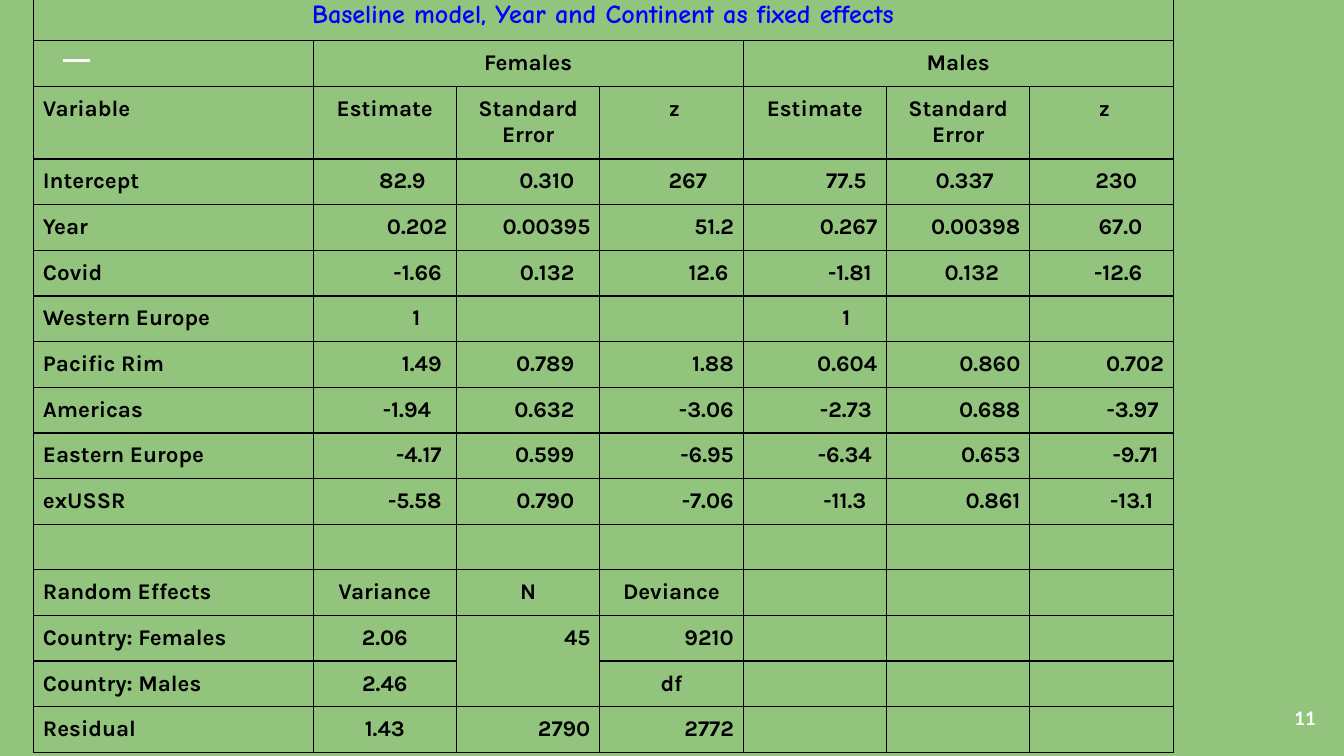
import pptx
import pptx.dml.color
import pptx.enum.shapes
import pptx.enum.text
import pptx.oxml
import pptx.util
from pptx.util import Inches

BLACK = pptx.dml.color.RGBColor(0x00, 0x00, 0x00)
BLUE = pptx.dml.color.RGBColor(0x00, 0x00, 0xFF)
GREEN = pptx.dml.color.RGBColor(0x93, 0xC4, 0x7D)
WHITE = pptx.dml.color.RGBColor(0xFF, 0xFF, 0xFF)
ALIGN = pptx.enum.text.PP_ALIGN
ANCHOR = pptx.enum.text.MSO_ANCHOR

TITLE = "Baseline model, Year and Continent as fixed effects"
SEXES = ["Females", "Males"]
STATISTICS = ["Estimate", "Standard Error", " z"]
PAGE_NUMBER = "11"

ESTIMATES = [
    ("Intercept", ("82.9", 4), ("0.310", 3), ("267", 5), ("77.5", 2), ("0.337", 5), ("230", 5)),
    ("Year", ("0.202", 0), ("0.00395", 0), ("51.2", 0), ("0.267", 0), ("0.00398", 0), ("67.0", 4)),
    ("Covid", ("-1.66", 1), ("0.132", 3), ("12.6", 1), ("-1.81", 1), ("0.132", 4), ("-12.6", 4)),
    ("Western Europe", ("1", 5), "", "", ("1", 5), "", ""),
    ("Pacific Rim", ("1.49", 1), ("0.789", 3), ("1.88", 0), ("0.604", 0), ("0.860", 0), ("0.702", 0)),
    ("Americas", ("-1.94", 3), ("0.632", 3), ("-3.06", 0), ("-2.73", 1), ("0.688", 0), ("-3.97", 1)),
    ("Eastern Europe", ("-4.17", 1), ("0.599", 3), ("-6.95", 0), ("-6.34", 1), ("0.653", 0), ("-9.71", 1)),
    ("exUSSR", ("-5.58", 1), ("0.790", 3), ("-7.06", 0), ("-11.3", 2), ("0.861", 0), ("-13.1", 2)),
]
RANDOM_EFFECTS = [
    ("Random Effects", "Variance", "N", "Deviance"),
    ("Country: Females", "2.06", ("45", 0), ("9210", 0)),
    ("Country: Males", "2.46", "", "df"),
    ("Residual", "1.43", ("2790", 0), ("2772", 0)),
]

COLUMN_COUNT = 7
LABEL_WIDTH = 2.08
VALUE_WIDTH = 6.4 / 6
ROW_HEIGHT = 5.08 / 15
HEADER_HEIGHT = 0.54
MARGIN = 0.07
INDENT_STEP = 0.04
HEADER_ROW = 2

rows = [(TITLE,), ("", SEXES[0], "", "", SEXES[1]), ("Variable", *STATISTICS, *STATISTICS)]
rows += ESTIMATES + [("",)] + RANDOM_EFFECTS
COUNTRY_ROW = len(rows) - 3
MERGES = [
    ((0, 0), (0, 6)),
    ((1, 1), (1, 3)),
    ((1, 4), (1, 6)),
    ((COUNTRY_ROW, 2), (COUNTRY_ROW + 1, 2)),
]


def style_paragraph(paragraph, name, size, color, alignment):
    paragraph.alignment = alignment
    paragraph.font.name = name
    paragraph.font.size = pptx.util.Pt(size)
    paragraph.font.color.rgb = color
    paragraph.font.bold = True


def add_borders(cell, width):
    properties = cell._tc.get_or_add_tcPr()
    for position, side in enumerate(("lnL", "lnR", "lnT", "lnB")):
        line = pptx.oxml.parse_xml(
            f'<a:{side} xmlns:a="http://schemas.openxmlformats.org/drawingml/2006/main" '
            f'w="{pptx.util.Pt(width)}"><a:solidFill><a:srgbClr val="{BLACK}"/></a:solidFill></a:{side}>'
        )
        properties.insert(position, line)


def fill_cell(cell, entry, row, column):
    text, steps = entry if isinstance(entry, tuple) else (entry, 0)
    if isinstance(entry, tuple):
        alignment = ALIGN.RIGHT
    elif column or row == 0:
        alignment = ALIGN.CENTER
    else:
        alignment = ALIGN.LEFT
    cell.margin_left = Inches(MARGIN)
    cell.margin_right = Inches(MARGIN + steps * INDENT_STEP)
    cell.margin_top = cell.margin_bottom = Inches(MARGIN if text else 0)
    cell.fill.background()
    add_borders(cell, 0.75)
    if text:
        cell.text = text
        paragraph = cell.text_frame.paragraphs[0]
        if row == 0:
            style_paragraph(paragraph, "Comic Neue", 14, BLUE, alignment)
        else:
            style_paragraph(paragraph, "Karla", 12, BLACK, alignment)


def add_results_table(slide):
    width = LABEL_WIDTH + VALUE_WIDTH * (COLUMN_COUNT - 1)
    height = ROW_HEIGHT * (len(rows) - 1) + HEADER_HEIGHT
    table = slide.shapes.add_table(
        len(rows), COLUMN_COUNT, Inches(0.25), Inches(-0.07), Inches(width), Inches(height)
    ).table
    table.first_row = table.horz_banding = False
    for index, column in enumerate(table.columns):
        column.width = Inches(VALUE_WIDTH if index else LABEL_WIDTH)
    for index, row in enumerate(table.rows):
        row.height = Inches(HEADER_HEIGHT if index == HEADER_ROW else ROW_HEIGHT)
    for row, entries in enumerate(rows):
        for column in range(COLUMN_COUNT):
            entry = entries[column] if column < len(entries) else ""
            fill_cell(table.cell(row, column), entry, row, column)
    for first, last in MERGES:
        table.cell(*first).merge(table.cell(*last))


def add_accent_line(slide):
    line = slide.shapes.add_connector(
        pptx.enum.shapes.MSO_CONNECTOR.STRAIGHT, Inches(0.47), Inches(0.45), Inches(0.67), Inches(0.45)
    )
    line.line.color.rgb = WHITE
    line.line.width = pptx.util.Pt(1.5)
    line._element.spPr.append(pptx.oxml.parse_xml(
        '<a:effectLst xmlns:a="http://schemas.openxmlformats.org/drawingml/2006/main"/>'
    ))


def add_page_number(slide):
    frame = slide.shapes.add_textbox(Inches(9.29), Inches(5.13), Inches(0.6), Inches(0.43)).text_frame
    frame.word_wrap = True
    frame.vertical_anchor = ANCHOR.MIDDLE
    frame.margin_left = frame.margin_right = Inches(0.1)
    frame.margin_top = frame.margin_bottom = Inches(0.1)
    frame.text = PAGE_NUMBER
    style_paragraph(frame.paragraphs[0], "Lato", 10, WHITE, ALIGN.RIGHT)


def main():
    presentation = pptx.Presentation()
    presentation.slide_width = Inches(10)
    presentation.slide_height = Inches(10 * 9 / 16)
    slide = presentation.slides.add_slide(presentation.slide_layouts[6])
    slide.background.fill.solid()
    slide.background.fill.fore_color.rgb = GREEN
    add_accent_line(slide)
    add_page_number(slide)
    add_results_table(slide)
    presentation.save("out.pptx")


if __name__ == "__main__":
    main()
